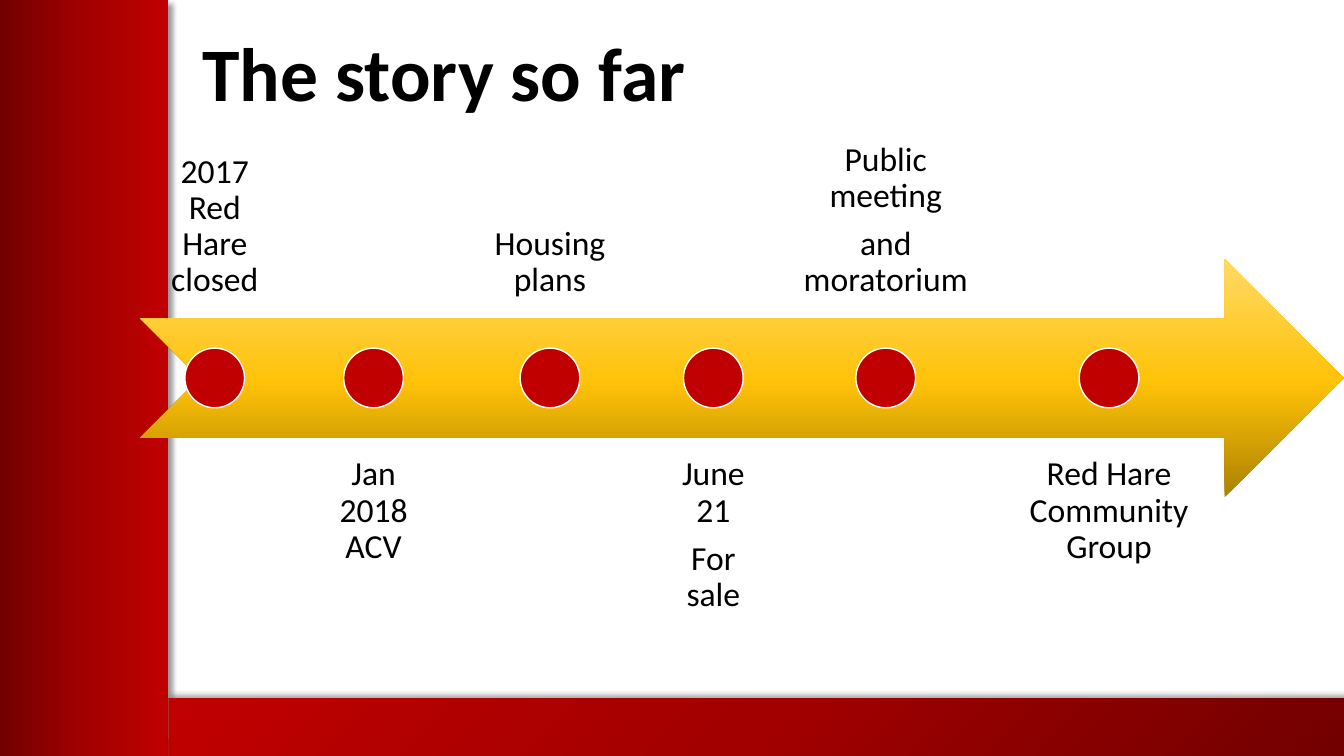
import pptx
import pptx.util
import pptx.dml.color
import pptx.enum.shapes
import pptx.enum.text
import pptx.oxml.ns
from lxml import etree

Inches, Pt = pptx.util.Inches, pptx.util.Pt
RGBColor = pptx.dml.color.RGBColor
SHAPE = pptx.enum.shapes.MSO_SHAPE
ANCHOR = pptx.enum.text.MSO_ANCHOR
ALIGN = pptx.enum.text.PP_ALIGN
qn = pptx.oxml.ns.qn

MAROON = RGBColor(0x72, 0x00, 0x00)
CRIMSON = RGBColor(0xA2, 0x00, 0x00)
RED = RGBColor(0xC0, 0x00, 0x00)
BRONZE = RGBColor(0xAB, 0x81, 0x00)
GOLD = RGBColor(0xFF, 0xC2, 0x08)
PALE_GOLD = RGBColor(0xFF, 0xD9, 0x66)
BLACK = RGBColor(0x00, 0x00, 0x00)
WHITE = RGBColor(0xFF, 0xFF, 0xFF)

FRAME_STOPS = [(0, MAROON), (50, CRIMSON), (100, RED)]
ARROW_STOPS = [(0, BRONZE), (48, GOLD), (100, PALE_GOLD)]
EVENTS = [
    (1.48, ["2017 Red Hare closed"]),
    (1.55, ["Jan 2018 ACV"]),
    (1.83, ["Housing plans"]),
    (1.29, ["June 21", "For sale"]),
    (2.01, ["Public meeting", "and moratorium"]),
    (2.3, ["Red Hare Community Group"]),
]
EVENT_GAP = 0.06


def add_gradient(shape, stops, angle=None):
    """Fill with a linear gradient, or one spreading from the lower right corner."""
    shape.fill.gradient()
    gradient = shape._element.spPr.find(qn("a:gradFill"))
    for child in list(gradient):
        gradient.remove(child)
    stop_list = etree.SubElement(gradient, qn("a:gsLst"))
    for position, color in stops:
        stop = etree.SubElement(stop_list, qn("a:gs"), pos=str(position * 1000))
        etree.SubElement(stop, qn("a:srgbClr"), val=str(color))
    if angle is None:
        spread = etree.SubElement(gradient, qn("a:path"), path="circle")
        etree.SubElement(spread, qn("a:fillToRect"), l="100000", t="100000")
    else:
        etree.SubElement(gradient, qn("a:lin"), ang=str(angle * 60000), scaled="0")


def add_shadow(shape, direction):
    """Cast a soft black shadow in the given direction."""
    shape.shadow.inherit = False
    effects = shape._element.spPr.find(qn("a:effectLst"))
    shadow = etree.SubElement(
        effects, qn("a:outerShdw"), blurRad=str(Pt(4)), dist=str(Pt(3)),
        dir=str(direction * 60000), algn="ctr", rotWithShape="0")
    color = etree.SubElement(shadow, qn("a:srgbClr"), val=str(BLACK))
    etree.SubElement(color, qn("a:alpha"), val="40000")


def add_plain_shape(slide, kind, left, top, width, height):
    """Add a preset shape without outline or shadow."""
    shape = slide.shapes.add_shape(
        kind, Inches(left), Inches(top), Inches(width), Inches(height))
    shape.shadow.inherit = False
    shape.line.fill.background()
    return shape


def add_text(slide, left, top, width, height, lines, size, anchor, inset):
    """Add a wrapped text box and return its paragraphs."""
    box = slide.shapes.add_textbox(
        Inches(left), Inches(top), Inches(width), Inches(height))
    frame = box.text_frame
    frame.word_wrap = True
    frame.vertical_anchor = anchor
    frame.margin_left = frame.margin_right = Inches(inset[0])
    frame.margin_top = frame.margin_bottom = Inches(inset[1])
    frame.text = "\n".join(lines)
    for paragraph in frame.paragraphs:
        paragraph.line_spacing = 0.9
        paragraph.font.name = "Calibri"
        paragraph.font.size = Pt(size)
        paragraph.font.color.rgb = BLACK
    return frame.paragraphs


def add_frame(slide, width, height, side=1.67, base=0.57):
    """Place the red bands along the left and bottom edges."""
    side_band = add_plain_shape(slide, SHAPE.RECTANGLE, 0, 0, side, height)
    add_gradient(side_band, FRAME_STOPS, 0)
    add_shadow(side_band, 45)
    base_band = add_plain_shape(
        slide, SHAPE.RECTANGLE, side, height - base, width - side, base)
    add_gradient(base_band, FRAME_STOPS)
    add_shadow(base_band, 315)


def add_title(slide, left, top, width, height):
    """Place the heading at the bottom of its box."""
    heading, = add_text(slide, left, top, width, height, ["The story so far"],
                        54, ANCHOR.BOTTOM, (0.1, 0.05))
    heading.font.bold = True


def add_timeline(slide, left, top, width, height):
    """Place the arrow with its events alternating above and below."""
    band = 0.4 * height
    dot = 0.1 * height
    arrow = add_plain_shape(slide, SHAPE.NOTCHED_RIGHT_ARROW,
                            left, top + 0.3 * height, width, band)
    add_gradient(arrow, ARROW_STOPS, 270)
    event_left = left
    for index, (event_width, lines) in enumerate(EVENTS):
        above = index % 2 == 0
        label = add_text(
            slide, event_left, top if above else top + 0.6 * height,
            event_width, band, lines, 24,
            ANCHOR.BOTTOM if above else ANCHOR.TOP, (0.19, 0.19))
        for paragraph in label:
            paragraph.alignment = ALIGN.CENTER
            paragraph.space_after = Pt(8.4)
        marker = add_plain_shape(
            slide, SHAPE.OVAL, event_left + (event_width - dot) / 2,
            top + 0.45 * height, dot, dot)
        marker.fill.solid()
        marker.fill.fore_color.rgb = RED
        marker.line.color.rgb = WHITE
        marker.line.width = Pt(1)
        event_left += event_width + EVENT_GAP


def main():
    """Build the slide and save it."""
    deck = pptx.Presentation()
    deck.slide_width, deck.slide_height = Inches(13.33), Inches(7.5)
    slide = deck.slides.add_slide(deck.slide_layouts[6])
    add_frame(slide, 13.33, 7.5)
    add_title(slide, 1.91, 0.33, 10.5, 0.89)
    add_timeline(slide, 1.39, 0.79, 11.94, 5.92)
    deck.save("out.pptx")


if __name__ == "__main__":
    main()
